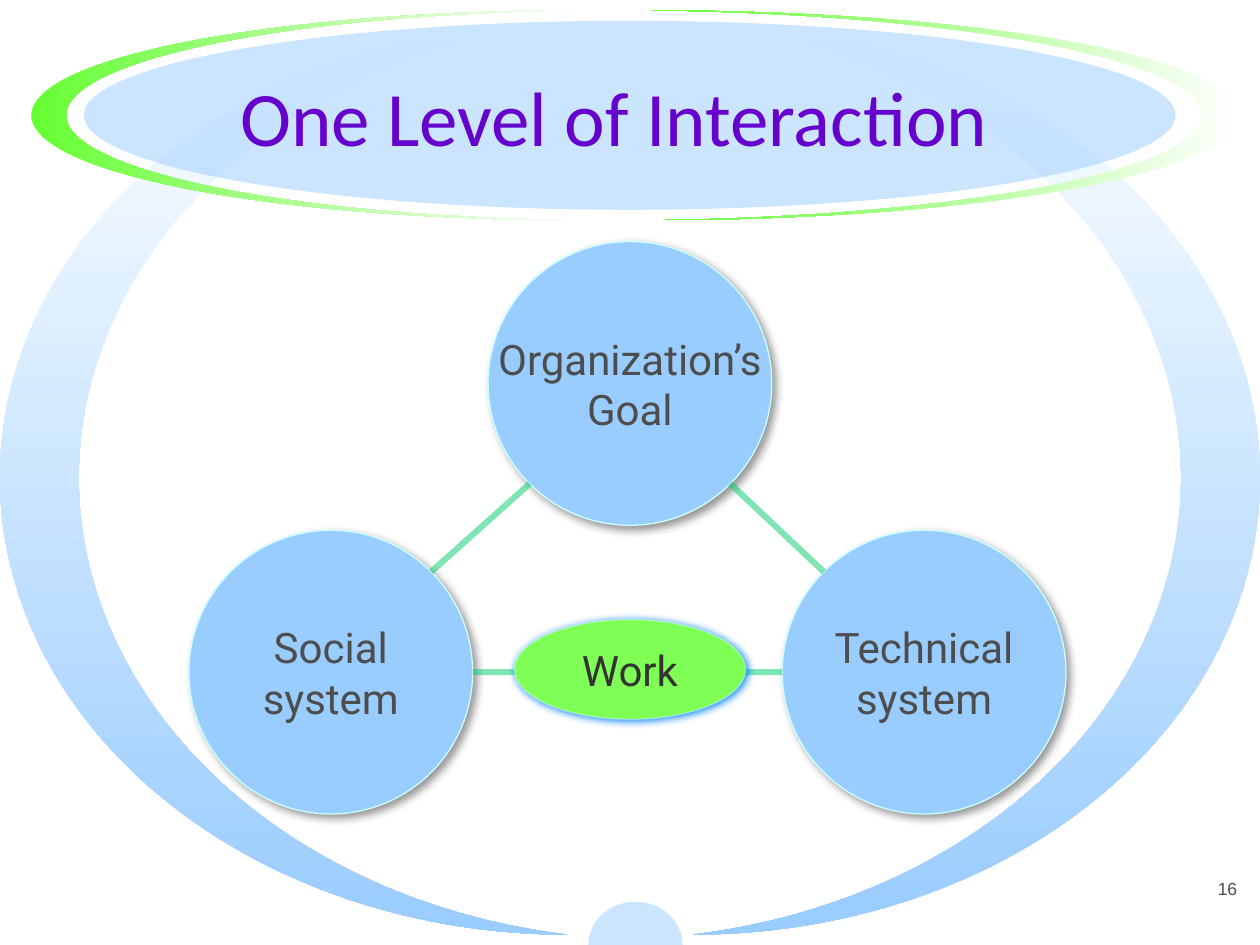
import math

from lxml import etree
from pptx import Presentation
from pptx.dml.color import RGBColor
from pptx.enum import shapes, text
from pptx.oxml.ns import qn
from pptx.util import Cm, Pt

SKY, ICE, LIME, WHITE = "99CCFF", "CCFFFF", "66FF33", "FFFFFF"
GREY, GREEN = "4D4D4D", "00CC66"
CIRCLE = 5.72  # diameter of the three main circles


def rgb(value):
    return RGBColor.from_string(value)


def set_alpha(owner, percent):
    """Make the solid colour of a shape's fill or line see-through."""
    for colour in owner.iterfind(f"{qn('a:solidFill')}/{qn('a:srgbClr')}"):
        etree.SubElement(colour, qn("a:alpha"), val=str(percent * 1000))


def add_shadow(shape, colour, blur, distance):
    effects = shape._element.spPr.find(qn("a:effectLst"))
    outer = etree.SubElement(
        effects, qn("a:outerShdw"), blurRad=str(Pt(blur)), dist=str(Pt(distance)),
        dir=str(45 * 60000), algn="ctr", rotWithShape="0")
    etree.SubElement(outer, qn("a:srgbClr"), val=colour)


def write(frame, content, size, colour, font,
          align=text.PP_ALIGN.CENTER, anchor=text.MSO_ANCHOR.MIDDLE, wrap=True):
    frame.word_wrap = wrap
    frame.vertical_anchor = anchor
    frame.text = content
    for paragraph in frame.paragraphs:
        paragraph.alignment = align
        paragraph.font.size = Pt(size)
        paragraph.font.name = font
        paragraph.font.color.rgb = rgb(colour)


def add_ellipse(slide, left, top, width, height, fill, alpha=100):
    ellipse = slide.shapes.add_shape(
        shapes.MSO_SHAPE.OVAL, Cm(left), Cm(top), Cm(width), Cm(height))
    ellipse.shadow.inherit = False
    ellipse.fill.solid()
    ellipse.fill.fore_color.rgb = rgb(fill)
    ellipse.line.fill.background()
    if alpha < 100:
        set_alpha(ellipse._element.spPr, alpha)
    return ellipse


def add_moon(slide, left, top, width, height, thickness, colours, angle=0, flip=False):
    moon = slide.shapes.add_shape(
        shapes.MSO_SHAPE.MOON, Cm(left), Cm(top), Cm(width), Cm(height))
    moon.adjustments[0] = thickness
    moon.shadow.inherit = False
    moon.line.fill.background()
    moon.fill.gradient()
    moon.fill.gradient_angle = angle
    for stop, colour in zip(moon.fill.gradient_stops, colours):
        stop.color.rgb = rgb(colour)
    if flip:
        moon._element.spPr.find(qn("a:xfrm")).set("flipH", "1")


def add_half_disc(slide, centre, base, radius, height):
    steps = 40
    points = [(Cm(centre + radius * math.cos(math.pi * i / steps)),
               Cm(base - height * math.sin(math.pi * i / steps)))
              for i in range(steps + 1)]
    builder = slide.shapes.build_freeform(*points[0])
    builder.add_line_segments(points[1:], close=True)
    disc = builder.convert_to_shape()
    disc.shadow.inherit = False
    disc.fill.solid()
    disc.fill.fore_color.rgb = rgb(SKY)
    set_alpha(disc._element.spPr, 50)
    disc.line.fill.background()


def add_backdrop(slide, width, height):
    """Half disc at the foot and the large blue ring."""
    add_half_disc(slide, 12.81, height, 0.95, 0.87)
    moon_width = 11.43
    for left, flip in ((width - moon_width, True), (0, False)):
        add_moon(slide, left, 0.42, moon_width, 18.42, 0.139, (WHITE, SKY), 270, flip)


def add_banner(slide, left, top, width, height):
    """Title on a pale ellipse between two green crescents."""
    add_moon(slide, left, top, 11.01, height, 0.064, (LIME, WHITE))
    right_width = 11.85
    add_moon(slide, left + width - right_width, top, right_width, height,
             0.064, (WHITE, LIME), flip=True)
    add_ellipse(slide, left + 1.06, top + 0.21, 22.01, 3.81, SKY, alpha=50)
    title = slide.shapes.title
    title.left, title.top = Cm(left + 2.12), Cm(top + 1.06)
    title.width, title.height = Cm(19.26), Cm(2.12)
    write(title.text_frame, "One Level of Interaction", 44, "6600CC", "Calibri")
    slide.shapes._spTree.append(title._element)  # in front of the ellipse


def add_node(slide, label, left, top, width, height, fill, colour, shadow, line_alpha=100):
    node = add_ellipse(slide, left, top, width, height, fill)
    node.line.color.rgb = rgb(ICE)
    node.line.width = Pt(0.75)
    if line_alpha < 100:
        set_alpha(node._element.spPr.find(qn("a:ln")), line_alpha)
    add_shadow(node, *shadow)
    write(node.text_frame, label, 24, colour, "Roboto", wrap=False)


def add_link(slide, start, end):
    link = slide.shapes.add_connector(
        shapes.MSO_CONNECTOR.STRAIGHT, *(Cm(v) for v in (*start, *end)))
    link.line.color.rgb = rgb(GREEN)
    link.line.width = Pt(3.5)
    set_alpha(link._element.spPr.find(qn("a:ln")), 50)
    etree.SubElement(link._element.spPr, qn("a:effectLst"))


def rim(corner, degrees):
    """Point on the edge of a main circle, clockwise from its right side."""
    radius, angle = CIRCLE / 2, math.radians(degrees)
    return (corner[0] + radius * (1 + math.cos(angle)),
            corner[1] + radius * (1 + math.sin(angle)))


def add_triangle(slide, left, top):
    goal = (left + 6.03, top)
    social = (left, top + 5.82)
    technical = (left + 11.96, top + 5.82)
    for label, corner in (("Organization’s\nGoal", goal), ("Social\nsystem", social),
                          ("Technical\nsystem", technical)):
        add_node(slide, label, *corner, CIRCLE, CIRCLE, SKY, GREY, ("969696", 5, 2.8))
    add_link(slide, rim(goal, 135), rim(social, -45))
    add_link(slide, rim(goal, 45), rim(technical, -135))
    add_link(slide, rim(social, 0), rim(technical, 180))
    add_node(slide, "Work", left + 6.56, top + 7.62, 4.66, 2.01, "7FFF56", "333333",
             ("0080FF", 5, 1), line_alpha=50)


def add_page_number(slide, left, top, width, height):
    number = slide.shapes.add_textbox(Cm(left), Cm(top), Cm(width), Cm(height))
    write(number.text_frame, "16", 10, GREY, "Arial",
          align=text.PP_ALIGN.RIGHT, anchor=text.MSO_ANCHOR.TOP)


def main():
    deck = Presentation()
    deck.slide_width, deck.slide_height = Cm(25.4), Cm(19.05)
    slide = deck.slides.add_slide(deck.slide_layouts[5])
    add_backdrop(slide, 25.4, 19.05)
    add_banner(slide, 0.63, 0.21, 24.35, 4.23)
    add_page_number(slide, 19.9, 17.57, 5.29, 1.27)
    add_triangle(slide, 3.81, 4.87)
    deck.save("out.pptx")


if __name__ == "__main__":
    main()
